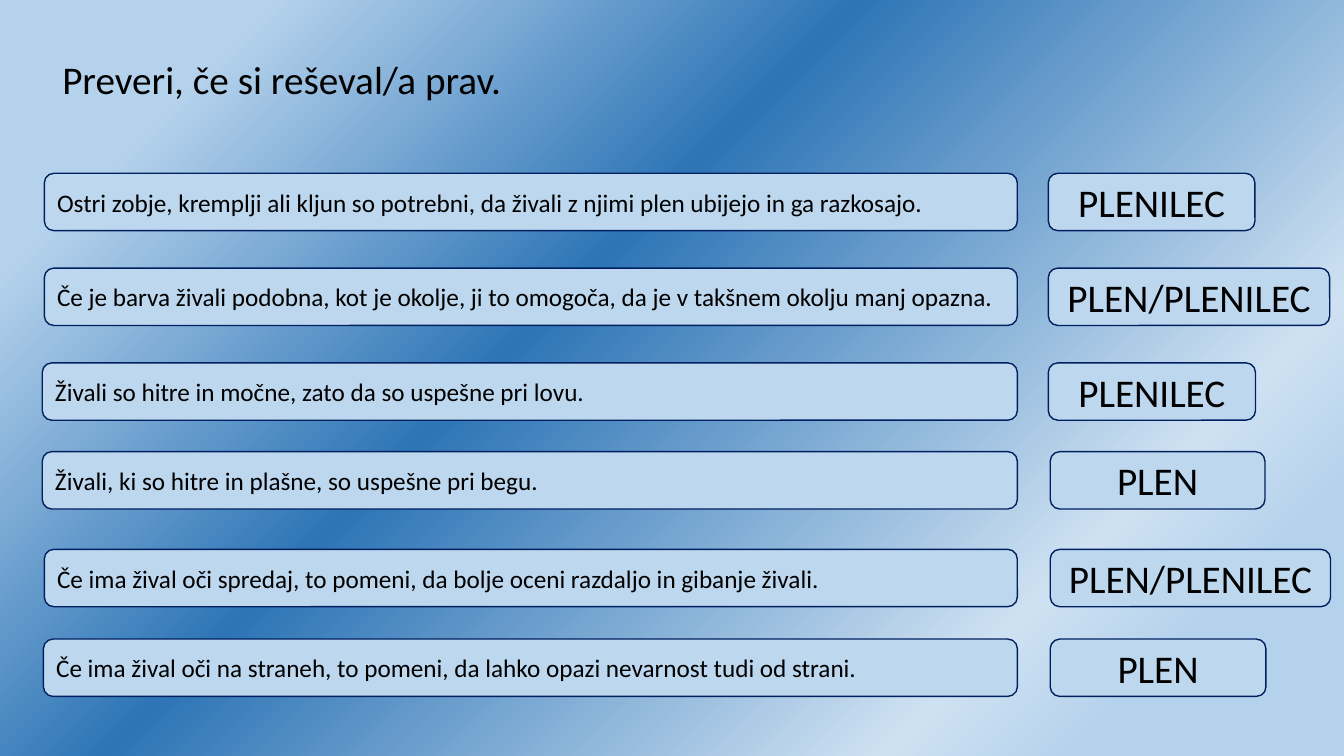
from pptx import Presentation
from pptx.dml.color import RGBColor
from pptx.enum.shapes import MSO_SHAPE as Preset
from pptx.enum.text import MSO_ANCHOR as Anchor, PP_ALIGN as Align
from pptx.oxml import parse_xml
from pptx.oxml.ns import nsdecls
from pptx.util import Pt

COLORS = {
    "text": "000000",
    "card": "BDD7EE",
    "border": "002060",
    "sky": "B5D2EC",
    "glow": "CEE1F2",
    "deep": "2E75B6",
}
BACKDROP = [(13, "sky"), (22, "glow"), (59, "deep"), (87, "sky")]
FONT = "Calibri"
CARD_HEIGHT = 41
STATEMENT_RIGHT = 726.7

ROWS = [
    (123.8, 31.7, "Ostri zobje, kremplji ali kljun so potrebni, da živali z njimi plen ubijejo in ga razkosajo.",
     748.8, 147.6, "PLENILEC"),
    (191.5, 31.7, "Če je barva živali podobna, kot je okolje, ji to omogoča, da je v takšnem okolju manj opazna.",
     748.8, 201, "PLEN/PLENILEC"),
    (259.2, 30.2, "Živali so hitre in močne, zato da so uspešne pri lovu.",
     748.8, 148, "PLENILEC"),
    (322.6, 30.2, "Živali, ki so hitre in plašne, so uspešne pri begu.",
     750.2, 153.4, "PLEN"),
    (392.4, 31.7, "Če ima žival oči spredaj, to pomeni, da bolje oceni razdaljo in gibanje živali.",
     750.2, 200.2, "PLEN/PLENILEC"),
    (456.5, 31, "Če ima žival oči na straneh, to pomeni, da lahko opazi nevarnost tudi od strani.",
     750.2, 154.1, "PLEN"),
]


def color(name):
    return RGBColor.from_string(COLORS[name])


def paint_backdrop(slide):
    stops = "".join(
        f'<a:gs pos="{percent * 1000}"><a:srgbClr val="{COLORS[name]}"/></a:gs>'
        for percent, name in BACKDROP
    )
    backdrop = parse_xml(
        f'<p:bg {nsdecls("p", "a")}><p:bgPr><a:gradFill rotWithShape="1">'
        f'<a:gsLst>{stops}</a:gsLst><a:path path="circle">'
        '<a:fillToRect l="100000" t="100000"/></a:path></a:gradFill>'
        '<a:effectLst/></p:bgPr></p:bg>'
    )
    slide.element.cSld.insert(0, backdrop)


def write(frame, wording, size, align):
    frame.word_wrap = True
    line = frame.paragraphs[0]
    line.text = wording
    line.alignment = align
    font = line.runs[0].font
    font.name = FONT
    font.size = Pt(size)
    font.color.rgb = color("text")


def add_heading(slide, wording):
    heading = slide.shapes.add_textbox(Pt(37.4), Pt(36), Pt(836.6), Pt(41))
    write(heading.text_frame, wording, 28, Align.LEFT)


def add_card(slide, left, top, width, wording, size, align):
    card = slide.shapes.add_shape(
        Preset.ROUNDED_RECTANGLE, Pt(left), Pt(top), Pt(width), Pt(CARD_HEIGHT)
    )
    card.shadow.inherit = False
    card.fill.solid()
    card.fill.fore_color.rgb = color("card")
    card.line.color.rgb = color("border")
    card.line.width = Pt(1)
    card.text_frame.vertical_anchor = Anchor.MIDDLE
    write(card.text_frame, wording, size, align)


def main():
    deck = Presentation()
    deck.slide_width = Pt(960)
    deck.slide_height = Pt(540)
    slide = deck.slides.add_slide(deck.slide_layouts[6])
    paint_backdrop(slide)
    add_heading(slide, "Preveri, če si reševal/a prav.")
    for top, left, statement, answer_left, answer_width, answer in ROWS:
        add_card(slide, left, top, STATEMENT_RIGHT - left, statement, 18, Align.LEFT)
        add_card(slide, answer_left, top, answer_width, answer, 28, Align.CENTER)
    deck.save("out.pptx")


if __name__ == "__main__":
    main()
